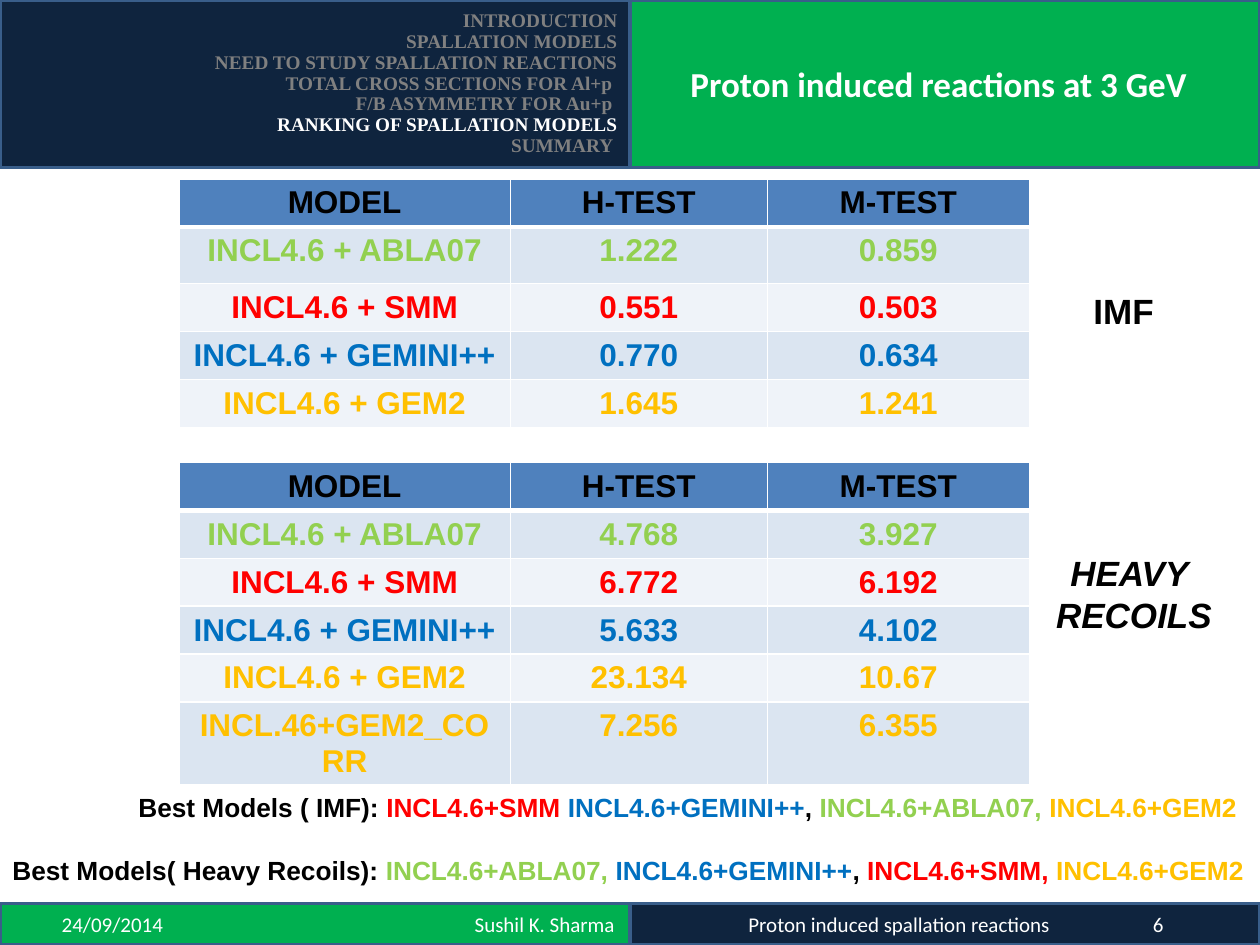
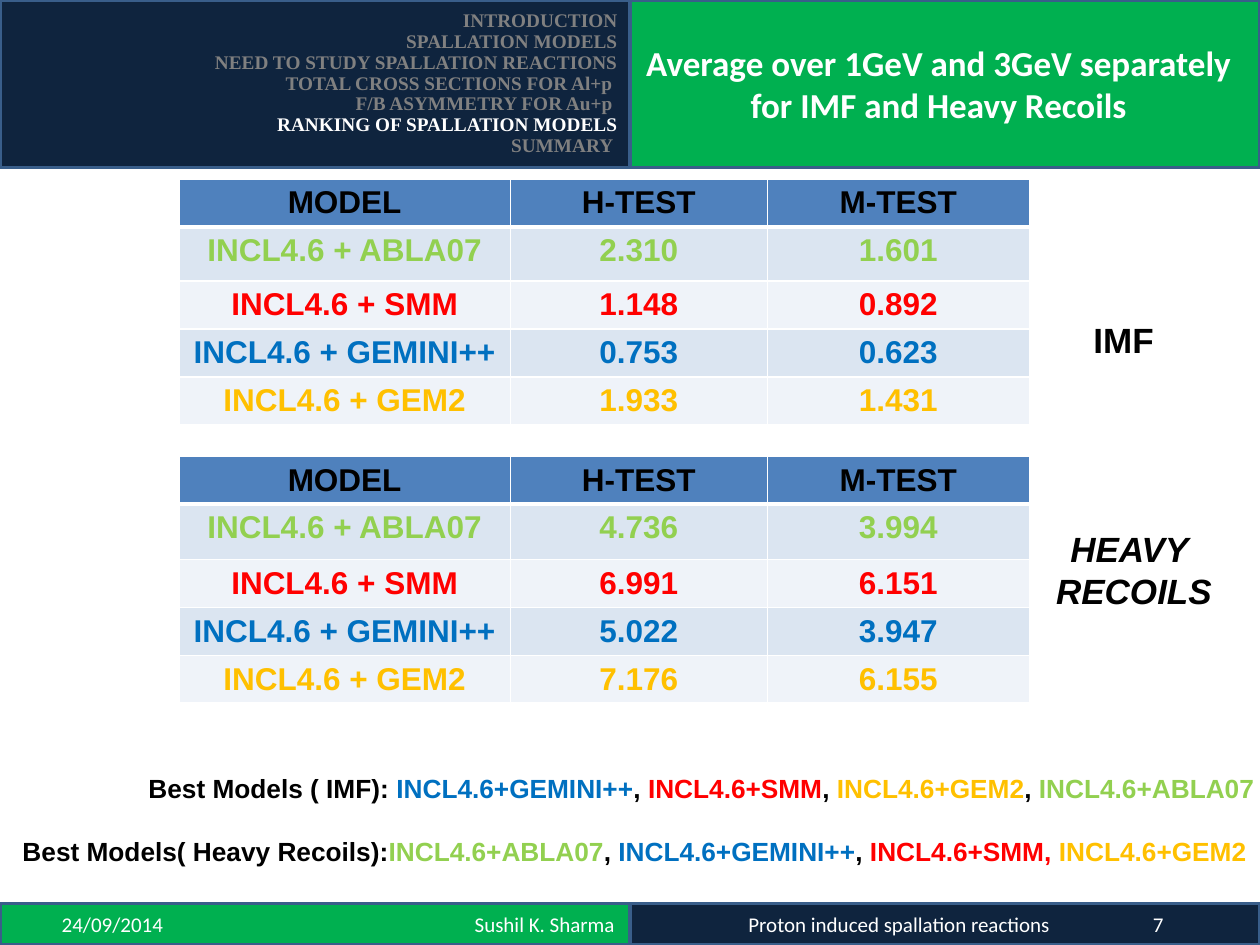
"""Build two slides that rank spallation models by H-test and M-test."""
from lxml import etree
from pptx import Presentation
from pptx import util as u
from pptx.dml.color import RGBColor
from pptx.enum import shapes, text
from pptx.oxml.ns import qn

BLACK, WHITE, GREY = "000000", "FFFFFF", "808080"
GREEN, NAVY, EDGE = "00B050", "0F243E", "395E8A"
LIME, RED, BLUE, AMBER = "92D050", "FF0000", "0070C0", "FFC000"
HEADER_FILL, ROW_FILLS = "4F81BD", ("EFF3F9", "DBE5F1")

SECTIONS = ["INTRODUCTION", "SPALLATION MODELS", "NEED TO STUDY SPALLATION REACTIONS",
            "TOTAL CROSS SECTIONS FOR Al+p ", "F/B ASYMMETRY FOR Au+p ",
            "RANKING OF SPALLATION MODELS", "SUMMARY "]
CURRENT_SECTION = "RANKING OF SPALLATION MODELS"
HEADINGS = ("MODEL", "H-TEST", "M-TEST")
MODELS = [("INCL4.6 + ABLA07", LIME), ("INCL4.6 + SMM", RED),
          ("INCL4.6 + GEMINI++", BLUE), ("INCL4.6 + GEM2", AMBER),
          ("INCL.46+GEM2_CORR", AMBER)]
COMMA = (", ", BLACK)

SLIDES = [
    {"number": 6, "title": "Proton induced reactions at 3 GeV",
     "tables": [
         {"top": 1.42, "first_row": 0.45,
          "scores": [("1.222", "0.859"), ("0.551", "0.503"),
                     ("0.770", "0.634"), ("1.645", "1.241")]},
         {"top": 3.67, "first_row": 0.38,
          "scores": [("4.768", "3.927"), ("6.772", "6.192"), ("5.633", "4.102"),
                     ("23.134", "10.67"), ("7.256", "6.355")]}],
     "label_tops": (2.25, 4.33),
     "rankings": [
         (1, 6.23, 9, [("Best Models ( IMF): ", BLACK), ("INCL4.6+SMM ", RED),
                       ("INCL4.6+GEMINI++", BLUE), COMMA,
                       ("INCL4.6+ABLA07, ", LIME), ("INCL4.6+GEM2", AMBER)]),
         (0, 6.73, 10, [("Best Models( Heavy Recoils): ", BLACK),
                        ("INCL4.6+ABLA07, ", LIME), ("INCL4.6+GEMINI++", BLUE), COMMA,
                        ("INCL4.6+SMM, ", RED), ("INCL4.6+GEM2", AMBER)])]},
    {"number": 7, "title": "Average over 1GeV and 3GeV separately for IMF and Heavy Recoils",
     "tables": [
         {"top": 1.42, "first_row": 0.43,
          "scores": [("2.310", "1.601"), ("1.148", "0.892"),
                     ("0.753", "0.623"), ("1.933", "1.431")]},
         {"top": 3.62, "first_row": 0.44,
          "scores": [("4.736", "3.994"), ("6.991", "6.151"),
                     ("5.022", "3.947"), ("7.176", "6.155")]}],
     "label_tops": (2.48, 4.14),
     "rankings": [
         (1.08, 6.08, 9, [("Best Models ( IMF): ", BLACK), ("INCL4.6+GEMINI++", BLUE),
                          COMMA, ("INCL4.6+SMM", RED), COMMA, ("INCL4.6+GEM2", AMBER),
                          COMMA, ("INCL4.6+ABLA07", LIME)]),
         (0.08, 6.58, 9.92, [("Best Models( Heavy Recoils):", BLACK),
                             ("INCL4.6+ABLA07", LIME), COMMA, ("INCL4.6+GEMINI++", BLUE),
                             COMMA, ("INCL4.6+SMM, ", RED), ("INCL4.6+GEM2", AMBER)])]},
]

SLIDE_W, SLIDE_H, HALF = 10, 7.5, 5
HEADER_H, FOOTER_H = 1.33, 0.33
TABLE_LEFT, COLUMNS, ROW_H = 1.42, (2.63, 2.04, 2.08), 0.37


def rgb(value):
    """Turn a hex string into a colour."""
    return RGBColor.from_string(value)


def style(para, size, colour, name="Arial", bold=True, italic=False, align=None):
    """Set the font and alignment of a paragraph."""
    font = para.font
    font.size, font.name, font.bold, font.italic = u.Pt(size), name, bold, italic
    font.color.rgb = rgb(colour)
    para.alignment = align


def paint(box, fill):
    """Give a band its fill, edge and middle anchor."""
    box.fill.solid()
    box.fill.fore_color.rgb = rgb(fill)
    box.line.color.rgb = rgb(EDGE)
    box.line.width = u.Pt(2)
    box.text_frame.vertical_anchor = text.MSO_ANCHOR.MIDDLE
    box.text_frame.word_wrap = True


def add_band(page, left, top, height, fill):
    """Add a half-width band and return its text frame."""
    box = page.shapes.add_shape(shapes.MSO_SHAPE.RECTANGLE, u.Inches(left), u.Inches(top),
                                u.Inches(HALF), u.Inches(height))
    box.shadow.inherit = False
    paint(box, fill)
    return box.text_frame


def add_title(page, title):
    """Place the title in the right half of the header."""
    box = page.shapes.title
    box.left, box.top = u.Inches(HALF), u.Inches(0)
    box.width, box.height = u.Inches(HALF), u.Inches(HEADER_H)
    paint(box, GREEN)
    frame = box.text_frame
    frame.auto_size = text.MSO_AUTO_SIZE.NONE
    frame.margin_right = u.Inches(0.2)
    frame.text = title
    style(frame.paragraphs[0], 20, WHITE, "Calibri", align=text.PP_ALIGN.CENTER)


def add_sections(page):
    """List the talk's sections with the current one lit."""
    frame = add_band(page, 0, 0, HEADER_H, NAVY)
    frame.text = "\n".join(SECTIONS)
    for para, section in zip(frame.paragraphs, SECTIONS):
        colour = WHITE if section == CURRENT_SECTION else GREY
        style(para, 11, colour, "Times New Roman", align=text.PP_ALIGN.RIGHT)
        para.line_spacing = 0.9


def add_footer(page, left, fill, words, indent, tab, tab_align):
    """Add a footer band whose two texts are parted by a tab stop."""
    frame = add_band(page, left, SLIDE_H - FOOTER_H, FOOTER_H, fill)
    frame.margin_left = u.Inches(indent)
    frame.text = "\t".join(words)
    para = frame.paragraphs[0]
    style(para, 12, WHITE, "Calibri", bold=False, align=text.PP_ALIGN.LEFT)
    stops = etree.Element(qn("a:tabLst"))
    etree.SubElement(stops, qn("a:tab"), pos=str(u.Inches(tab)), algn=tab_align)
    para.font._element.addprevious(stops)


def add_borders(cell, row):
    """Draw white cell borders, thick under the heading row."""
    props = cell._tc.get_or_add_tcPr()
    for side, thick in (("L", False), ("R", False), ("T", row == 1), ("B", row == 0)):
        line = etree.SubElement(props, qn("a:ln" + side), w=str(u.Pt(3 if thick else 1)))
        fill = etree.SubElement(line, qn("a:solidFill"))
        etree.SubElement(fill, qn("a:srgbClr"), val=WHITE)


def add_scores(page, top, first_row, scores):
    """Add a table of test scores, one model a row."""
    rows = [(HEADINGS, BLACK)]
    rows += [((model, *pair), colour) for (model, colour), pair in zip(MODELS, scores)]
    heights = [ROW_H, first_row] + [ROW_H] * (len(rows) - 2)
    table = page.shapes.add_table(len(rows), len(COLUMNS), u.Inches(TABLE_LEFT), u.Inches(top),
                                  u.Inches(sum(COLUMNS)), u.Inches(sum(heights))).table
    for column, width in zip(table.columns, COLUMNS):
        column.width = u.Inches(width)
    for index, (values, colour) in enumerate(rows):
        table.rows[index].height = u.Inches(heights[index])
        for cell, value in zip(table.rows[index].cells, values):
            add_borders(cell, index)
            cell.fill.solid()
            cell.fill.fore_color.rgb = rgb(ROW_FILLS[index % 2] if index else HEADER_FILL)
            cell.text = value
            style(cell.text_frame.paragraphs[0], 18, colour, align=text.PP_ALIGN.CENTER)


def add_text(page, left, top, width, height):
    """Add a wrapping text box and return its text frame."""
    box = page.shapes.add_textbox(*map(u.Inches, (left, top, width, height)))
    box.text_frame.word_wrap = True
    return box.text_frame


def add_labels(page, imf_top, heavy_top):
    """Name the fragment group beside each table."""
    imf = add_text(page, 8.58, imf_top, 0.83, 0.44)
    imf.text = "IMF"
    style(imf.paragraphs[0], 20, BLACK)
    heavy = add_text(page, 8.25, heavy_top, 1.5, 0.77)
    heavy.text = "HEAVY \nRECOILS"
    for para in heavy.paragraphs:
        style(para, 20, BLACK, italic=True, align=text.PP_ALIGN.CENTER)


def add_ranking(page, left, top, width, spans):
    """Write a line of models from best to worst."""
    para = add_text(page, left, top, width, 0.35).paragraphs[0]
    style(para, 15, BLACK)
    for words, colour in spans:
        span = para.add_run()
        span.text = words
        span.font.color.rgb = rgb(colour)


def main():
    """Build and save the deck."""
    deck = Presentation()
    deck.slide_width, deck.slide_height = u.Inches(SLIDE_W), u.Inches(SLIDE_H)
    for content in SLIDES:
        page = deck.slides.add_slide(deck.slide_layouts[5])
        for table in content["tables"]:
            add_scores(page, **table)
        add_labels(page, *content["label_tops"])
        add_footer(page, 0, GREEN, ("24/09/2014", "Sushil K. Sharma"), 0.49, 4.39, "r")
        add_footer(page, HALF, NAVY, ("Proton induced spallation reactions",
                                      str(content["number"])), 0.94, 3.21, "l")
        add_title(page, content["title"])
        add_sections(page)
        for ranking in content["rankings"]:
            add_ranking(page, *ranking)
    deck.save("out.pptx")


if __name__ == "__main__":
    main()
